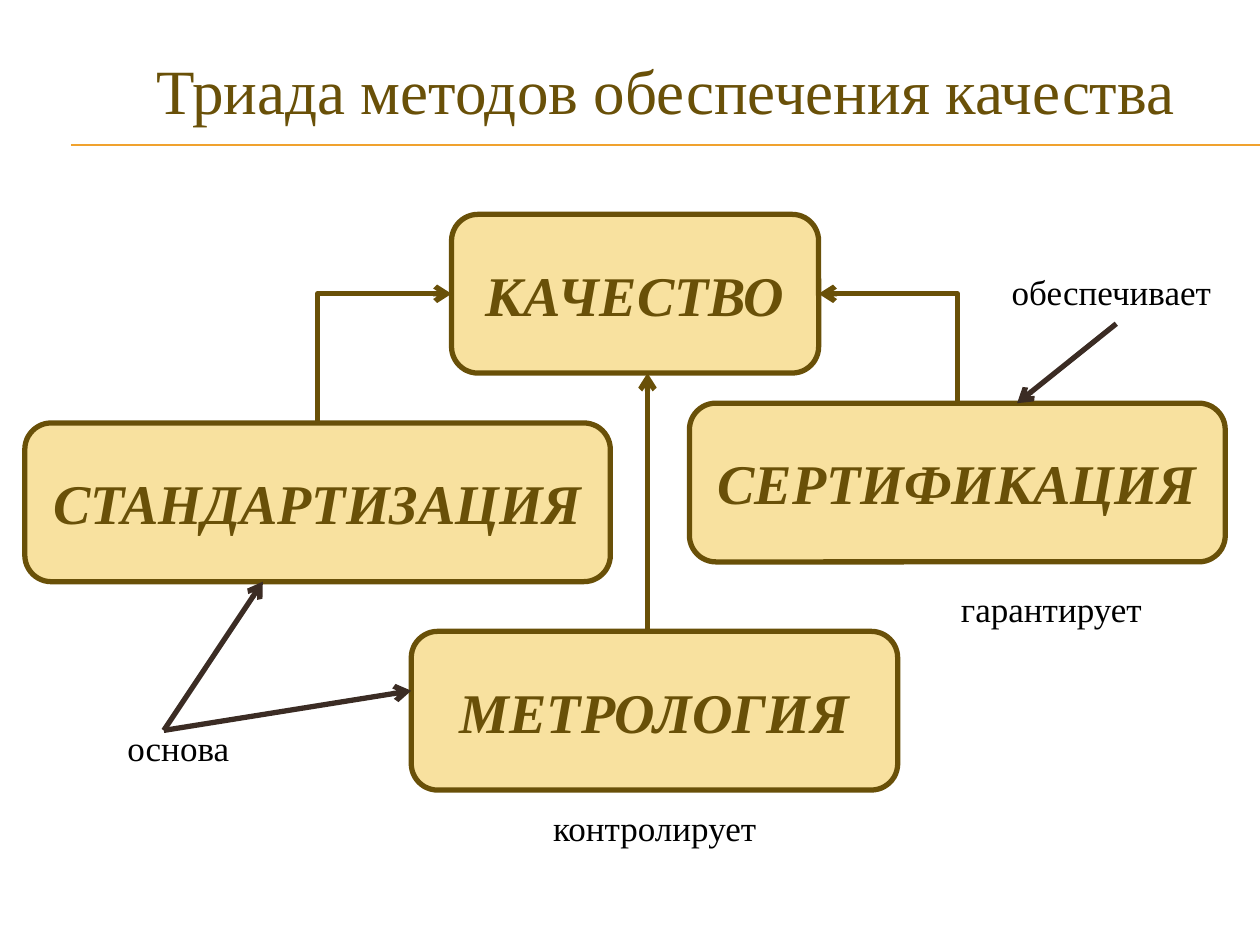
from lxml.etree import SubElement
from pptx import Presentation
from pptx.dml.color import RGBColor
from pptx.enum.shapes import MSO_CONNECTOR, MSO_SHAPE
from pptx.enum.text import MSO_ANCHOR, MSO_AUTO_SIZE, PP_ALIGN
from pptx.oxml.ns import qn
from pptx.util import Pt

COLORS = {
    "brown": "695008",
    "dark": "3B2C24",
    "sand": "F8E19F",
    "rule": "F0A22E",
    "black": "000000",
}


class TriadSlide:
    """Draws the elements of the quality triad in one style."""

    font = "Times New Roman"
    box_height = 90.7
    label_height = 31.5

    def __init__(self, prs):
        self.s = prs.slides.add_slide(prs.slide_layouts[6])

    def color(self, name):
        return RGBColor.from_string(COLORS[name])

    def add_text(self, tf, text, size, color, align=PP_ALIGN.CENTER, strong=False):
        p = tf.paragraphs[0]
        p.alignment = align
        r = p.add_run()
        r.text = text
        r.font.name = self.font
        r.font.size = Pt(size)
        r.font.color.rgb = self.color(color)
        r.font.bold = r.font.italic = strong

    def text(self, text, x, y, w, h, size, color, align=PP_ALIGN.CENTER, wrap=True):
        tf = self.s.shapes.add_textbox(Pt(x), Pt(y), Pt(w), Pt(h)).text_frame
        tf.word_wrap = wrap
        tf.auto_size = MSO_AUTO_SIZE.SHAPE_TO_FIT_TEXT
        self.add_text(tf, text, size, color, align)

    def title(self, text):
        self.text(text, 82.1, 25.9, 612, 51, 36, "brown", PP_ALIGN.LEFT, False)

    def label(self, text, x, y, w):
        self.text(text, x, y, w, self.label_height, 20, "black")

    def box(self, text, x, y, w):
        sp = self.s.shapes.add_shape(
            MSO_SHAPE.ROUNDED_RECTANGLE, Pt(x), Pt(y), Pt(w), Pt(self.box_height))
        sp.shadow.inherit = False
        sp.fill.solid()
        sp.fill.fore_color.rgb = self.color("sand")
        sp.line.color.rgb = self.color("brown")
        sp.line.width = Pt(3)
        tf = sp.text_frame
        tf.word_wrap = True
        tf.vertical_anchor = MSO_ANCHOR.MIDDLE
        self.add_text(tf, text, 32, "brown", strong=True)

    def line(self, start, end, color, width=3, arrow=True, kind=MSO_CONNECTOR.STRAIGHT):
        c = self.s.shapes.add_connector(kind, *map(Pt, start + end))
        c.line.color.rgb = self.color(color)
        c.line.width = Pt(width)
        sp_pr = c.element.spPr
        if arrow:
            SubElement(sp_pr.find(qn("a:ln")), qn("a:tailEnd"), type="arrow")
        SubElement(sp_pr, qn("a:effectLst"))
        return c

    def bent(self, start, end):
        (x1, y1), (x2, y2) = start, end
        cx, cy = (x1 + x2) / 2, (y1 + y2) / 2
        half_w, half_h = (y1 - y2) / 2, abs(x2 - x1) / 2
        side = 1 if x2 > x1 else -1
        c = self.line((cx + side * half_w, cy + half_h),
                      (cx - side * half_w, cy - half_h),
                      "brown", kind=MSO_CONNECTOR.ELBOW)
        c.element.spPr.find(qn("a:prstGeom")).set("prst", "bentConnector2")
        c.element.spPr.find(qn("a:xfrm")).set("rot", str(side * 90 % 360 * 60000))


def main():
    prs = Presentation()
    prs.slide_width, prs.slide_height = Pt(720), Pt(540)
    slide = TriadSlide(prs)

    for y in (82.8, 83.3):
        slide.line((40.5, y), (720, y), "rule", 0.75, arrow=False)
    slide.title("Триада методов обеспечения качества")

    for text, x, y, w in (
        ("СЕРТИФИКАЦИЯ", 394, 230.4, 306.2),
        ("СТАНДАРТИЗАЦИЯ", 14.2, 241.7, 334.6),
        ("МЕТРОЛОГИЯ", 235, 360.8, 278),
        ("КАЧЕСТВО", 258, 122.5, 209.8),
    ):
        slide.box(text, x, y, w)

    slide.bent((181.5, 241.7), (258, 167.9))
    slide.bent((547.1, 230.4), (467.8, 167.9))
    slide.line((370, 360.8), (370, 213.2), "brown")

    base = (93.6, 417.4)
    for start, end in (
        (base, (150.2, 332.4)),
        (base, (235, 394.7)),
        ((637.9, 185), (581.2, 230.4)),
    ):
        slide.line(start, end, "dark")

    for text, x, y, w in (
        ("контролирует", 286.3, 457.2, 175.7),
        ("основа", 42.5, 411.8, 118.8),
        ("обеспечивает", 564.2, 151, 141.8),
        ("гарантирует", 513, 332.4, 175.7),
    ):
        slide.label(text, x, y, w)

    prs.save("out.pptx")


if __name__ == "__main__":
    main()
